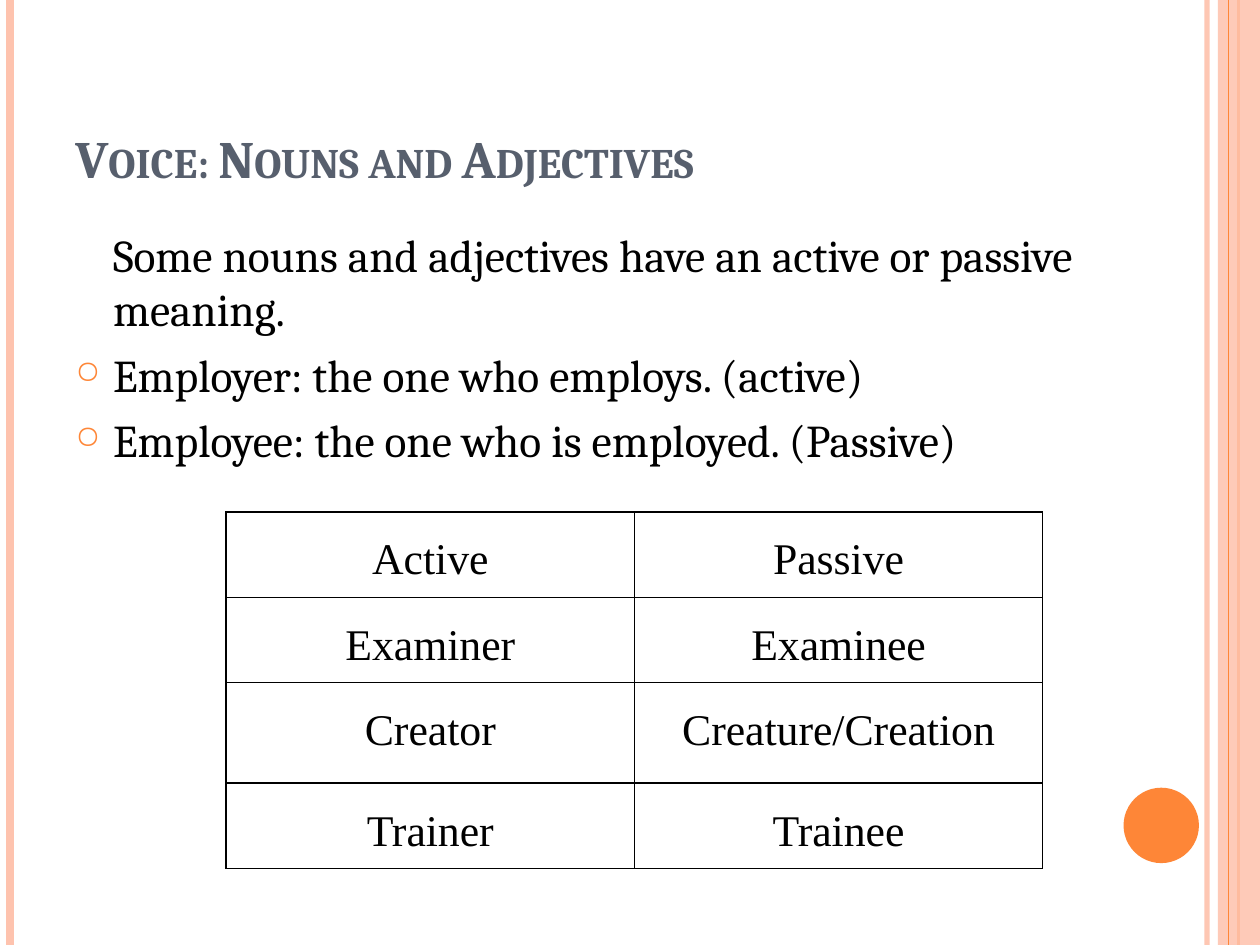
from lxml import etree
from pptx import Presentation
from pptx.dml.color import RGBColor
from pptx.enum.shapes import MSO_CONNECTOR, MSO_SHAPE
from pptx.enum.text import MSO_ANCHOR, PP_ALIGN
from pptx.oxml.ns import qn
from pptx.util import Cm, Pt

LINE = MSO_CONNECTOR.STRAIGHT
RECT, OVAL = MSO_SHAPE.RECTANGLE, MSO_SHAPE.OVAL
TOP, BOTTOM = MSO_ANCHOR.TOP, MSO_ANCHOR.BOTTOM
LEFT, CENTER = PP_ALIGN.LEFT, PP_ALIGN.CENTER

WIDE, HIGH = 25.4, 19.05
MARGIN, TEXT_WIDE = 1.27, 20.75
PEACH, ORANGE, SLATE, BLACK = "FEC3AE", "FE8637", "575F6D", "000000"
SERIF, TIMES = "Cambria", "Times New Roman"

INTRO = "Some nouns and adjectives have an active or passive meaning."
POINTS = [
    "Employer: the one who employs. (active)",
    "Employee: the one who is employed. (Passive)",
]
PAIRS = [
    ("Active", "Passive"),
    ("Examiner", "Examinee"),
    ("Creator", "Creature/Creation"),
    ("Trainer", "Trainee"),
]
ROWS = [1.72, 1.72, 2.03, 1.72]
COL = 8.23


def color(code):
    return RGBColor.from_string(code)


def sub(parent, tag, **attrs):
    return etree.SubElement(parent, qn(tag), attrs)


def fade(part, percent):
    """Set the opacity of every solid colour inside an XML part."""
    for clr in part.iter(qn("a:srgbClr")):
        sub(clr, "a:alpha", val=str(percent * 1000))


def add_rule(slide, x, code, width, alpha=None):
    """Draw a vertical line over the full slide height."""
    rule = slide.shapes.add_connector(LINE, Cm(x), Cm(0), Cm(x), Cm(HIGH))
    rule.line.color.rgb = color(code)
    rule.line.width = Pt(width)
    props = rule._element.spPr
    if alpha:
        fade(props, alpha)
    sub(props, "a:effectLst")


def add_block(slide, kind, x, y, w, h, code, alpha=None):
    block = slide.shapes.add_shape(kind, Cm(x), Cm(y), Cm(w), Cm(h))
    block.shadow.inherit = False
    block.fill.solid()
    block.fill.fore_color.rgb = color(code)
    block.line.fill.background()
    if alpha:
        fade(block._element.spPr, alpha)


def add_frame(slide, y, h, anchor):
    box = slide.shapes.add_textbox(Cm(MARGIN), Cm(y), Cm(TEXT_WIDE), Cm(h))
    frame = box.text_frame
    frame.word_wrap = True
    frame.vertical_anchor = anchor
    return frame


def add_run(para, text, size, face, code, bold=False):
    run = para.add_run()
    run.text = text
    font = run.font
    font.size, font.name, font.bold = Pt(size), face, bold
    font.color.rgb = color(code)
    return run


def set_bullet(para):
    props = para._p.get_or_add_pPr()
    props.set("indent", str(-Cm(0.76)))
    tint = sub(props, "a:buClr")
    sub(tint, "a:srgbClr", val=ORANGE)
    sub(props, "a:buSzPct", val="70000")
    sub(props, "a:buChar", char="○")


def add_title(slide):
    para = add_frame(slide, 0.76, 3.18, BOTTOM).paragraphs[0]
    para.alignment = LEFT
    run = add_run(para, "Voice: Nouns and Adjectives", 30, SERIF, SLATE, True)
    run.font._element.set("cap", "small")


def add_body(slide):
    frame = add_frame(slide, 4.45, 13.55, TOP)
    for num, text in enumerate([INTRO] + POINTS):
        para = frame.add_paragraph() if num else frame.paragraphs[0]
        para.space_before = Pt(6)
        para._p.get_or_add_pPr().set("marL", str(Cm(0.76)))
        if num:
            set_bullet(para)
        add_run(para, text, 26, SERIF, BLACK)


def set_border(cell):
    props = cell._tc.get_or_add_tcPr()
    for side in "LRTB":
        edge = sub(props, "a:ln" + side, w=str(Pt(1)))
        sub(sub(edge, "a:solidFill"), "a:srgbClr", val=BLACK)


def fill_cell(cell, text):
    set_border(cell)
    cell.fill.background()
    cell.margin_left = cell.margin_right = Cm(0.18)
    cell.margin_top = cell.margin_bottom = 0
    para = cell.text_frame.paragraphs[0]
    para.alignment = CENTER
    para.line_spacing = 1.5
    add_run(para, text, 25, TIMES, BLACK)


def add_pairs(slide):
    table = slide.shapes.add_table(
        len(PAIRS), 2, Cm(4.56), Cm(10.32), Cm(2 * COL), Cm(sum(ROWS))
    ).table
    table.first_row = table.horz_banding = False
    for col in table.columns:
        col.width = Cm(COL)
    for row, high, pair in zip(table.rows, ROWS, PAIRS):
        row.height = Cm(high)
        for cell, text in zip(row.cells, pair):
            fill_cell(cell, text)


def add_decor(slide):
    add_rule(slide, 24.33, PEACH, 3, 93)
    add_rule(slide, 0.21, PEACH, 4.5)
    add_rule(slide, 24.97, ORANGE, 1.5)
    add_block(slide, RECT, 24.55, 0, WIDE - 24.55, HIGH, PEACH, 87)
    add_rule(slide, 24.77, ORANGE, 0.75)
    add_block(slide, OVAL, 22.65, 15.88, 1.52, 1.52, ORANGE)


def main():
    deck = Presentation()
    deck.slide_width, deck.slide_height = Cm(WIDE), Cm(HIGH)
    slide = deck.slides.add_slide(deck.slide_layouts[6])
    add_decor(slide)
    add_title(slide)
    add_body(slide)
    add_pairs(slide)
    deck.save("out.pptx")


if __name__ == "__main__":
    main()
